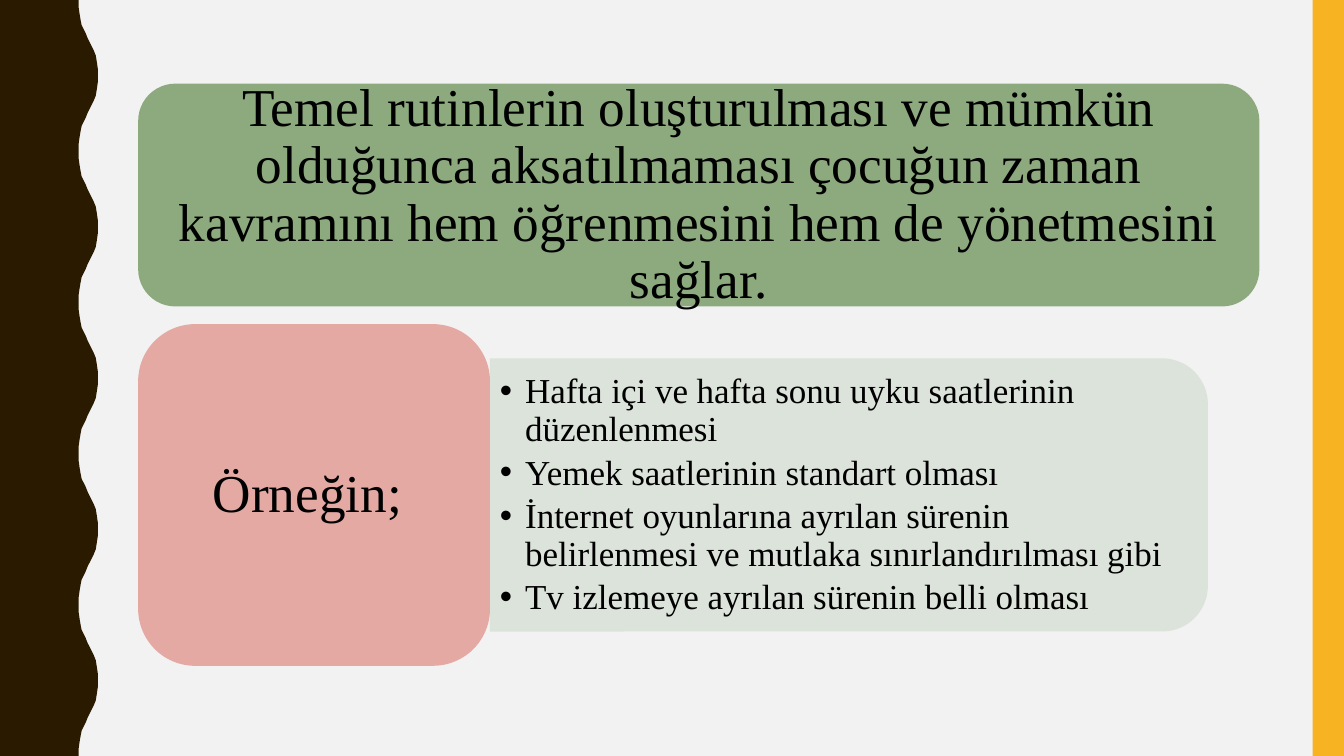
from pptx import Presentation
from pptx.dml.color import RGBColor as Rgb
from pptx.enum.shapes import MSO_SHAPE as Shape
from pptx.enum.text import MSO_ANCHOR as Anchor, PP_ALIGN as Align
from pptx.oxml.ns import qn
from pptx.util import Inches, Pt
from lxml.etree import SubElement as Sub

COLORS = {
    "paper": "F2F2F2", "wave": "2A1A00", "stripe": "F8B323", "title": "8CAA7E",
    "panel": "DAE2D8", "label": "E5A9A4", "ink": "000000",
}
TITLE = ("Temel rutinlerin oluşturulması ve mümkün olduğunca aksatılmaması çocuğun "
         "zaman kavramını hem öğrenmesini hem de yönetmesini sağlar.")
ITEMS = [
    "Hafta içi ve hafta sonu uyku saatlerinin düzenlenmesi",
    "Yemek saatlerinin standart olması",
    "İnternet oyunlarına ayrılan sürenin belirlenmesi ve mutlaka sınırlandırılması gibi",
    "Tv izlemeye ayrılan sürenin belli olması",
]
BEND = [(78, 0), (78, 7), (79, 14), (80, 20), (81, 25), (83, 29), (85, 33), (87, 38),
        (89, 42), (91, 46), (93, 50), (95, 55), (96, 61), (97, 68), (97, 75)]


class Deck:
    font = "Times New Roman"

    def __init__(self):
        self.show = Presentation()
        self.show.slide_width = self.wide = Inches(13.33)
        self.show.slide_height = self.high = Inches(7.5)
        self.slide = self.show.slides.add_slide(self.show.slide_layouts[6])
        self.paint(self.slide.background, "paper")

    def place(self, left, top, width, height):
        return (int(left * self.wide / 100), int(top * self.high / 100),
                int(width * self.wide / 100), int(height * self.high / 100))

    def paint(self, item, color):
        item.fill.solid()
        item.fill.fore_color.rgb = Rgb.from_string(COLORS[color])

    def finish(self, shape, color):
        shape.shadow.inherit = False
        self.paint(shape, color)
        shape.line.fill.background()
        return shape

    def block(self, kind, box, color):
        shape = self.slide.shapes.add_shape(kind, *self.place(*box))
        return self.finish(shape, color)

    def wave(self, bend, count, color):
        step = 2 * bend[-1][1]
        cycle = bend + [(x, step - y) for x, y in bend[-2::-1]]
        points = [(x, y + step * turn) for turn in range(count) for x, y in cycle]
        build = self.slide.shapes.build_freeform(0, 0, scale=self.wide / 1333)
        build.add_line_segments(points + [(0, step * count)], close=True)
        self.finish(build.convert_to_shape(), color)

    def panel(self, box, color, alpha):
        left, top, width, height = self.place(*box)
        shape = self.slide.shapes.add_shape(
            Shape.ROUND_2_SAME_RECTANGLE, left + (width - height) // 2,
            top + (height - width) // 2, height, width)
        shape.rotation = 90
        self.finish(shape, color)
        tint = shape._element.spPr.find(qn("a:solidFill"))[0]
        Sub(tint, qn("a:alpha"), val=str(alpha * 1000))

    def label(self, shape, lines, size, pad):
        frame = shape.text_frame
        frame.text = "\n".join(lines)
        frame.word_wrap = True
        frame.vertical_anchor = Anchor.MIDDLE
        frame.margin_left = frame.margin_right = Inches(pad)
        frame.margin_top = frame.margin_bottom = Inches(0.05)
        for para in frame.paragraphs:
            para.line_spacing = 0.9
            para.alignment = Align.CENTER
            for run in para.runs:
                run.font.name = self.font
                run.font.size = Pt(size)
                run.font.color.rgb = Rgb.from_string(COLORS["ink"])
        return frame

    def card(self, box, color, text, pad):
        shape = self.block(Shape.ROUNDED_RECTANGLE, box, color)
        self.label(shape, [text], 38, pad)

    def bullets(self, box, lines):
        shape = self.slide.shapes.add_textbox(*self.place(*box))
        for para in self.label(shape, lines, 25, 0.1).paragraphs:
            para.alignment = Align.LEFT
            para.space_after = Pt(4)
            props = para._p.get_or_add_pPr()
            props.set("marL", str(Inches(0.25)))
            props.set("indent", str(-Inches(0.25)))
            Sub(props, qn("a:buFont"), typeface="Arial")
            Sub(props, qn("a:buChar"), char="•")


def main():
    deck = Deck()
    deck.wave(BEND, 5, "wave")
    deck.block(Shape.RECTANGLE, (97.67, 0, 2.33, 100), "stripe")
    deck.card((10.28, 11.07, 83.42, 29.47), "title", TITLE, 0.27)
    deck.panel((36.46, 47.4, 53.41, 36.13), "panel", 90)
    deck.bullets((36.46, 49.2, 52.44, 32.67), ITEMS)
    deck.card((10.28, 42.87, 26.18, 45.2), "label", "Örneğin; ", 0.33)
    deck.show.save("out.pptx")


if __name__ == "__main__":
    main()
